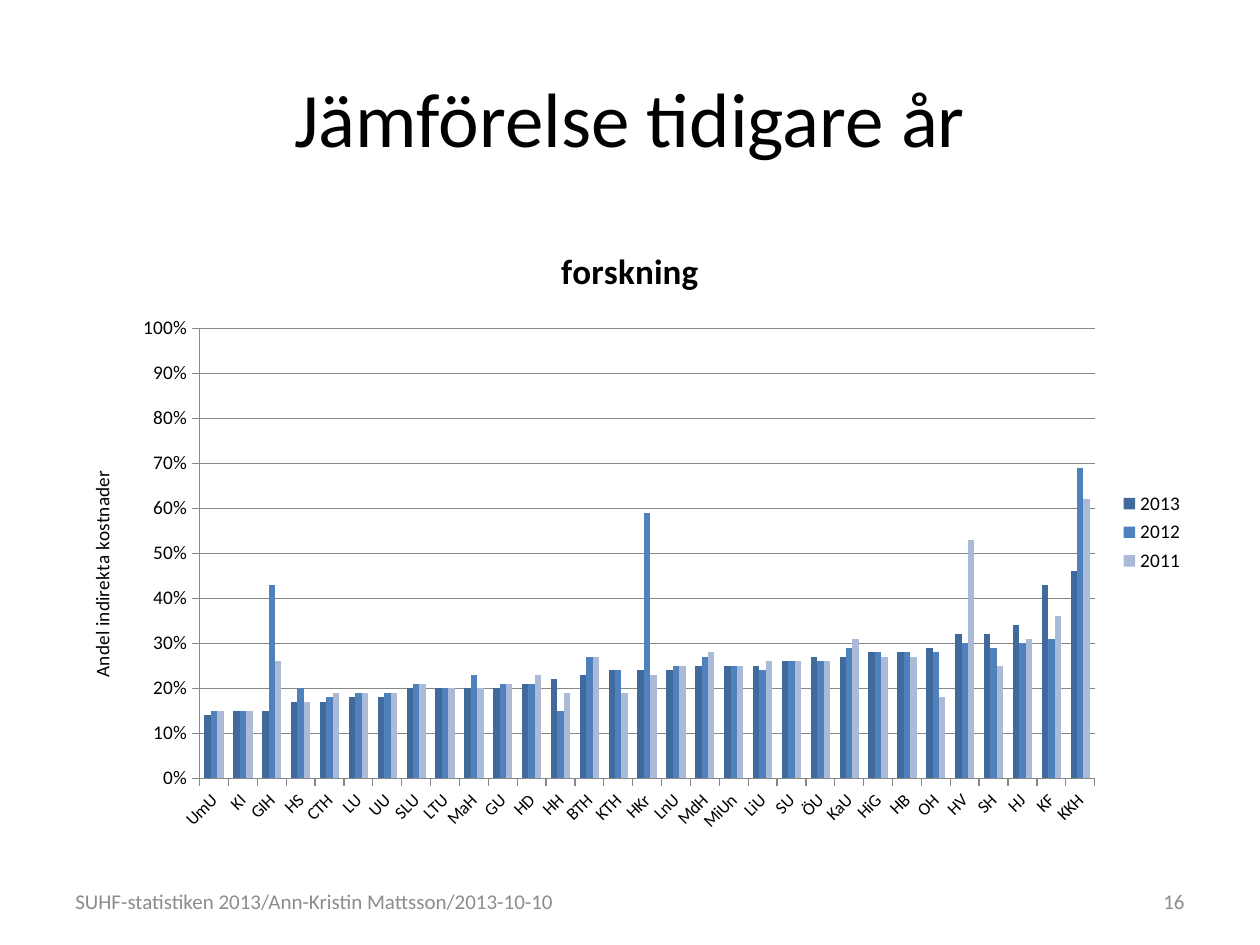
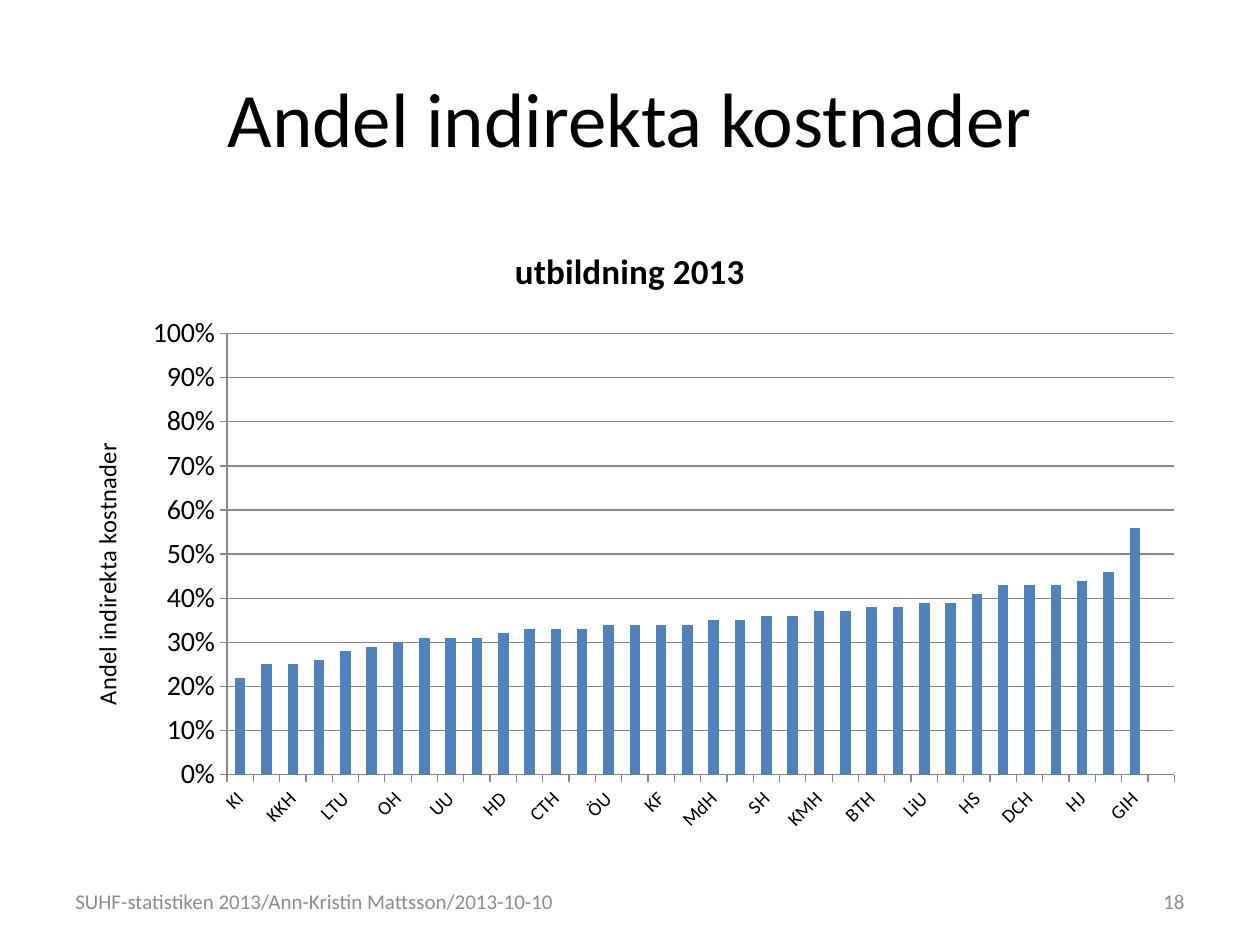
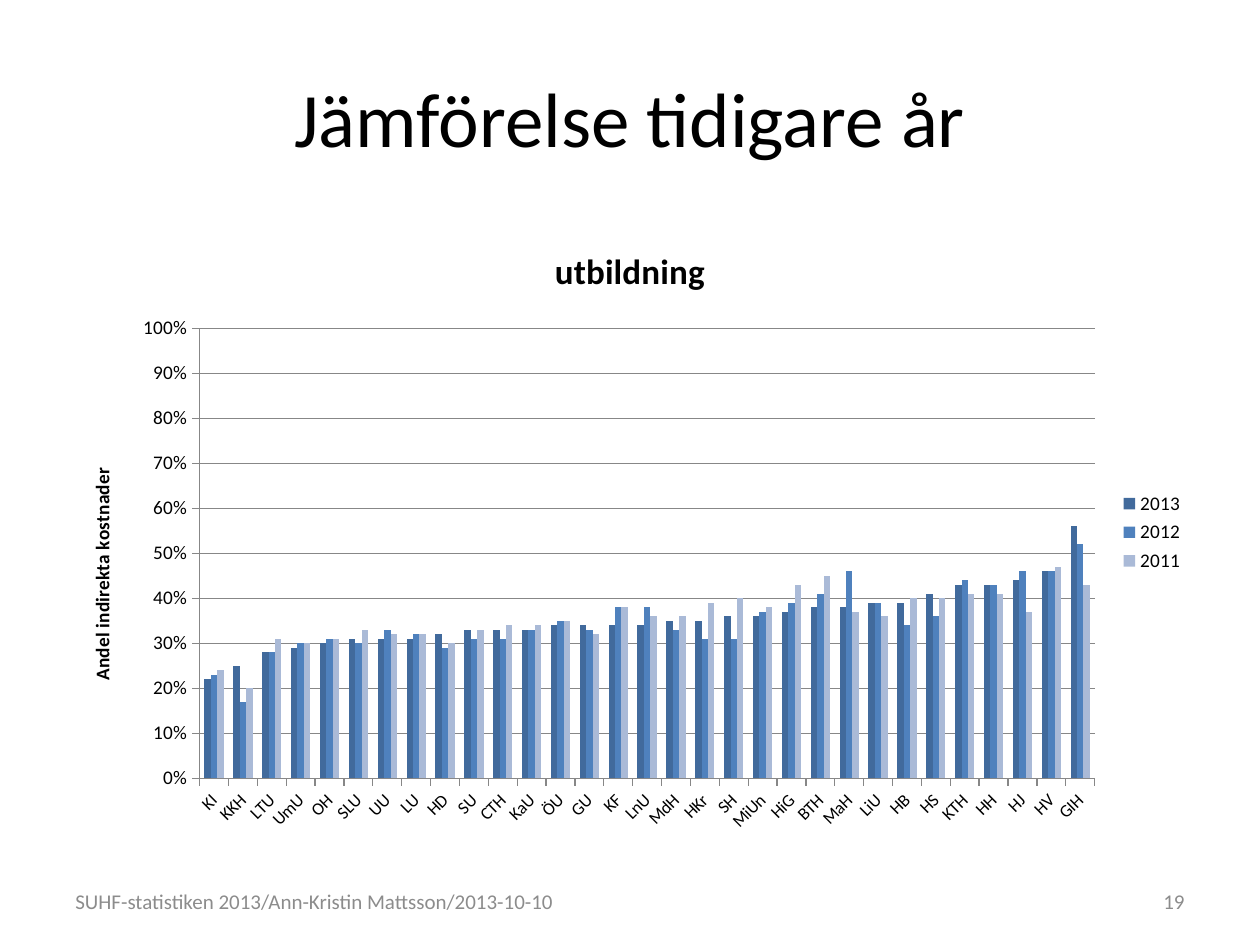
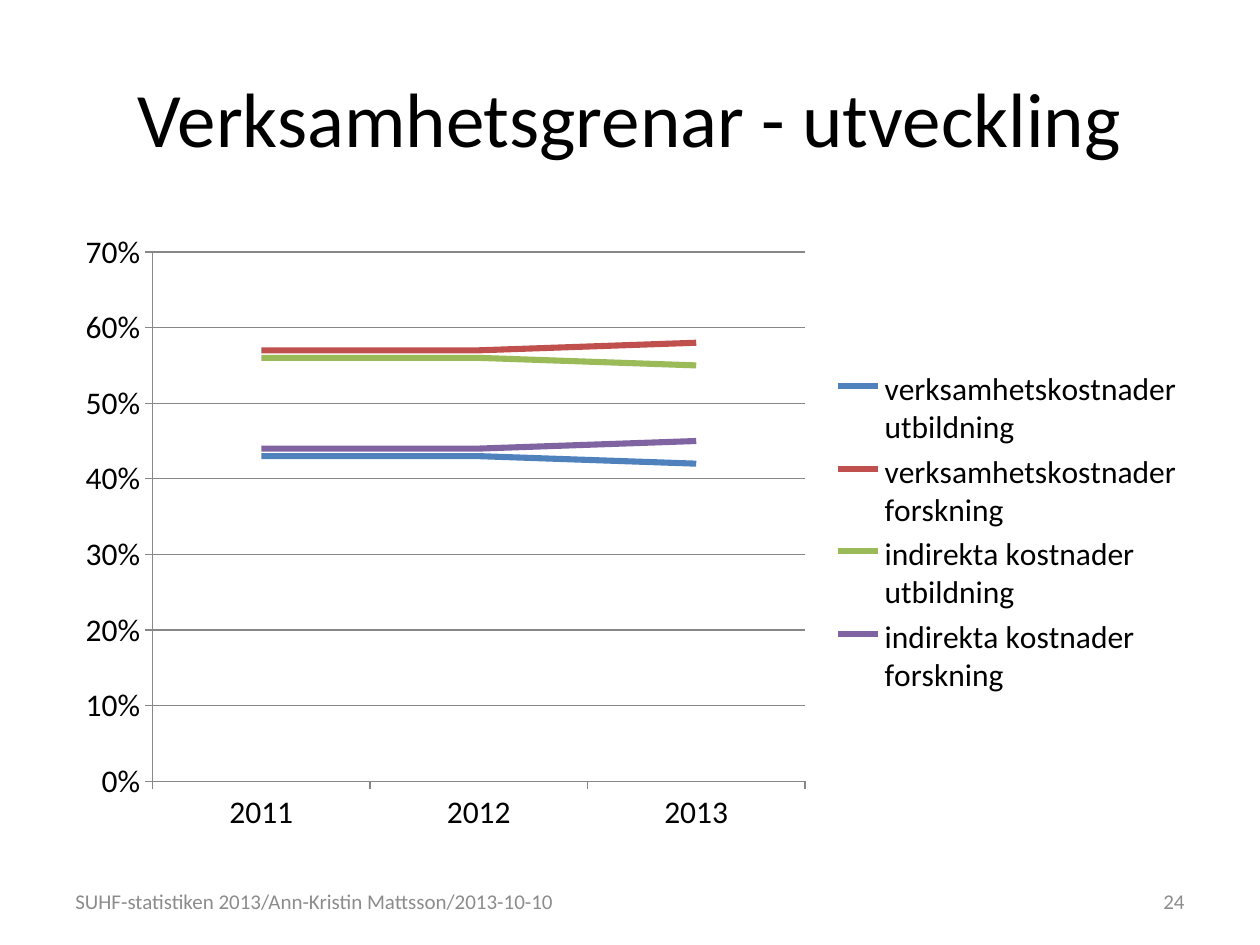
import pptx
import pptx.chart.data
import pptx.dml.color
import pptx.enum.chart
import pptx.enum.text
import pptx.util

PX = 9144  # EMU in one px, 100 px to the inch
FONT = "Calibri"
COLOURS = {
    "text": "000000", "footer": "8C8C8C", "grid": "878787",
    "dark blue": "416A9C", "blue": "4F81BD", "pale blue": "AABAD7",
    "red": "C0504D", "green": "9BBB59", "purple": "8064A2",
}
SLIDE_SIZE = (1000, 750)
TITLE_BOX = (50, 30, 900, 125)
CHART_BOX = (50, 175, 900, 495)
FOOTER_BOX = (50, 695, 474, 40)
NUMBER_BOX = (717, 695, 233, 40)

ALIGN = pptx.enum.text.PP_ALIGN
CHART_TYPE = pptx.enum.chart.XL_CHART_TYPE

FOOTER = "SUHF-statistiken 2013/Ann-Kristin Mattsson/2013-10-10"
AXIS_TITLE = "Andel indirekta kostnader"
YEARS = ("2013", "2012", "2011")

# Each school with its whole percentages for the years above
RESEARCH = """
    UmU 14 15 15, KI 15 15 15, GIH 15 43 26, HS 17 20 17, CTH 17 18 19,
    LU 18 19 19, UU 18 19 19, SLU 20 21 21, LTU 20 20 20, MaH 20 23 20,
    GU 20 21 21, HD 21 21 23, HH 22 15 19, BTH 23 27 27, KTH 24 24 19,
    HKr 24 59 23, LnU 24 25 25, MdH 25 27 28, MiUn 25 25 25, LiU 25 24 26,
    SU 26 26 26, ÖU 27 26 26, KaU 27 29 31, HiG 28 28 27, HB 28 28 27,
    OH 29 28 18, HV 32 30 53, SH 32 29 25, HJ 34 30 31, KF 43 31 36, KKH 46 69 62
"""
# Schools with one value have no earlier years to compare with
EDUCATION = """
    KI 22 23 24, SDH 25, KKH 25 17 20, FHS 26, LTU 28 28 31, UmU 29 30 30,
    OH 30 31 31, SLU 31 30 33, UU 31 33 32, LU 31 32 32, HD 32 29 30,
    SU 33 31 33, CTH 33 31 34, KaU 33 33 34, ÖU 34 35 35, GU 34 33 32,
    KF 34 38 38, LnU 34 38 36, MdH 35 33 36, HKr 35 31 39, SH 36 31 40,
    MiUn 36 37 38, KMH 37, HiG 37 39 43, BTH 38 41 45, MaH 38 46 37,
    LiU 39 39 36, HB 39 34 40, HS 41 36 40, KTH 43 44 41, DCH 43, HH 43 43 41,
    HJ 44 46 37, HV 46 46 47, GIH 56 52 43
"""
NAMES_2013 = {"LnU": "LNU", "MiUn": "MiU", "MaH": "MAH"}


def read_rows(table):
    rows = [row.split() for row in table.split(",")]
    return [(name, [int(value) for value in values]) for name, *values in rows]


def compare_years(table):
    rows = [row for row in read_rows(table) if len(row[1]) == len(YEARS)]
    columns = zip(*(values for _, values in rows))
    return {"categories": [name for name, _ in rows],
            "series": dict(zip(YEARS, columns))}


def latest_year(table):
    rows = read_rows(table)
    # The last column is an empty place after the last school
    return {"categories": [NAMES_2013.get(name, name) for name, _ in rows],
            "series": {"Series 1": [values[0] for _, values in rows] + [None]}}


COMPARISON = {
    "title": "Jämförelse tidigare år", "type": CHART_TYPE.COLUMN_CLUSTERED,
    "colours": ("dark blue", "blue", "pale blue"), "maximum": 1,
    "category size": 10, "value size": 11, "legend size": 11, "axis title size": 11,
}
SLIDES = [
    COMPARISON | compare_years(RESEARCH) | {
        "number": 16, "chart title": "forskning", "axis title bold": False,
    },
    latest_year(EDUCATION) | {
        "title": "Andel indirekta kostnader", "number": 18,
        "type": CHART_TYPE.COLUMN_CLUSTERED, "chart title": "utbildning 2013",
        "colours": ("blue",), "maximum": 1, "category size": 11, "value size": 16,
        "axis title size": 14, "axis title bold": False,
    },
    COMPARISON | compare_years(EDUCATION) | {
        "number": 19, "chart title": "utbildning", "axis title bold": True,
    },
    {
        "title": "Verksamhetsgrenar - utveckling", "number": 24,
        "type": CHART_TYPE.LINE, "colours": ("blue", "red", "green", "purple"),
        "maximum": 0.7, "category size": 18, "value size": 18, "legend size": 18,
        "categories": YEARS[::-1],
        "series": {
            "verksamhetskostnader utbildning": (43, 43, 42),
            "verksamhetskostnader forskning": (57, 57, 58),
            "indirekta kostnader utbildning": (56, 56, 55),
            "indirekta kostnader forskning": (44, 44, 45),
        },
    },
]


def scaled(box):
    return [length * PX for length in box]


def colour(name):
    return pptx.dml.color.RGBColor.from_string(COLOURS[name])


def format_font(font, size, color="text", bold=False):
    font.name, font.size, font.bold = FONT, pptx.util.Pt(size), bold
    font.color.rgb = colour(color)


def write_text(frame, text, size, color="text", bold=False, align=None):
    paragraph = frame.paragraphs[0]
    paragraph.alignment = align
    run = paragraph.add_run()
    run.text = text
    format_font(run.font, size, color, bold)


def add_text(slide, box, text, **text_format):
    frame = slide.shapes.add_textbox(*scaled(box)).text_frame
    frame.word_wrap = True
    frame.vertical_anchor = pptx.enum.text.MSO_ANCHOR.MIDDLE
    write_text(frame, text, **text_format)


def format_line(line, color, width):
    line.color.rgb = colour(color)
    line.width = pptx.util.Pt(width)


def format_axes(chart, content):
    for axis, size in ((chart.category_axis, content["category size"]),
                       (chart.value_axis, content["value size"])):
        axis.major_tick_mark = pptx.enum.chart.XL_TICK_MARK.OUTSIDE
        axis.minor_tick_mark = pptx.enum.chart.XL_TICK_MARK.NONE
        format_line(axis.format.line, "grid", 0.75)
        format_font(axis.tick_labels.font, size)

    value_axis = chart.value_axis
    value_axis.minimum_scale, value_axis.maximum_scale = 0, content["maximum"]
    value_axis.major_unit = 0.1
    value_axis.has_major_gridlines = True
    format_line(value_axis.major_gridlines.format.line, "grid", 0.75)
    value_axis.tick_labels.number_format = "0%"
    value_axis.tick_labels.number_format_is_linked = False

    if "axis title size" in content:
        frame = value_axis.axis_title.text_frame
        write_text(frame, AXIS_TITLE, size=content["axis title size"],
                   bold=content["axis title bold"])
        frame._txBody.bodyPr.set("rot", "-5400000")
        # Slanted category names
        chart.category_axis._element.txPr.bodyPr.set("rot", "-2700000")


def add_chart(slide, content):
    data = pptx.chart.data.CategoryChartData(number_format="0%")
    data.categories = content["categories"]
    for name, percentages in content["series"].items():
        data.add_series(name, [None if value is None else value / 100
                               for value in percentages])
    chart = slide.shapes.add_chart(content["type"], *scaled(CHART_BOX), data).chart
    format_font(chart.font, 10)
    format_axes(chart, content)

    chart.has_title = "chart title" in content
    if chart.has_title:
        write_text(chart.chart_title.text_frame, content["chart title"], size=20, bold=True)
        chart.chart_title.include_in_layout = False

    chart.has_legend = "legend size" in content
    if chart.has_legend:
        chart.legend.position = pptx.enum.chart.XL_LEGEND_POSITION.RIGHT
        chart.legend.include_in_layout = False
        format_font(chart.legend.font, content["legend size"])

    plot = chart.plots[0]
    plot.vary_by_categories = False
    is_line = content["type"] == CHART_TYPE.LINE
    if not is_line:
        plot.gap_width = 150
    for series, color in zip(plot.series, content["colours"]):
        if is_line:
            series.smooth = False
            series.marker.style = pptx.enum.chart.XL_MARKER_STYLE.NONE
            format_line(series.format.line, color, 3.5)
        else:
            series.invert_if_negative = False
            series.format.fill.solid()
            series.format.fill.fore_color.rgb = colour(color)


def main():
    presentation = pptx.Presentation()
    presentation.slide_width, presentation.slide_height = scaled(SLIDE_SIZE)
    for content in SLIDES:
        slide = presentation.slides.add_slide(presentation.slide_layouts[6])
        add_text(slide, TITLE_BOX, content["title"], size=44, align=ALIGN.CENTER)
        add_text(slide, FOOTER_BOX, FOOTER, size=12, color="footer")
        add_text(slide, NUMBER_BOX, str(content["number"]), size=12, color="footer",
                 align=ALIGN.RIGHT)
        add_chart(slide, content)
    presentation.save("out.pptx")


if __name__ == "__main__":
    main()
